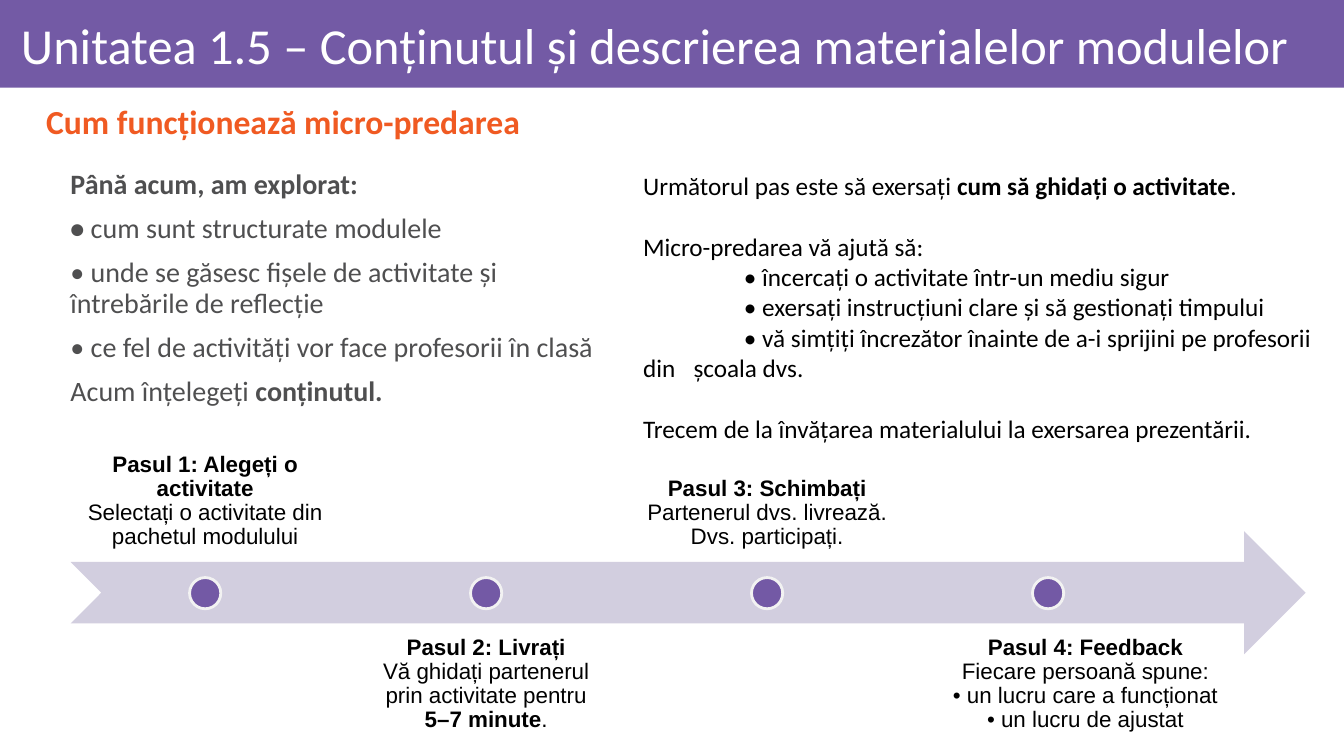
import pptx
import pptx.util
import pptx.dml.color
import pptx.enum.shapes
import pptx.enum.text

Inches = pptx.util.Inches
Pt = pptx.util.Pt
SHAPE = pptx.enum.shapes.MSO_SHAPE
ANCHOR = pptx.enum.text.MSO_ANCHOR
ALIGN = pptx.enum.text.PP_ALIGN

COLORS = {
    "banner": "735AA5", "dot": "7359A5", "dot_line": "F2F2F2", "arrow": "D2CEDF",
    "heading": "F05A22", "body": "4F4F50", "white": "FFFFFF", "black": "000000",
}


def rgb(name):
    return pptx.dml.color.RGBColor.from_string(COLORS[name])


class SlideBuilder:
    def __init__(self, slide):
        self.slide = slide

    def shape(self, kind, box, fill, line=None):
        shape = self.slide.shapes.add_shape(kind, *map(Inches, box))
        shape.shadow.inherit = False
        shape.fill.solid()
        shape.fill.fore_color.rgb = rgb(fill)
        if line:
            shape.line.color.rgb = rgb(line)
            shape.line.width = Pt(2)
        else:
            shape.line.fill.background()

    def text(self, box, lines, size, color, font="Calibri", anchor=ANCHOR.TOP,
             align=ALIGN.LEFT, margins=(0.1, 0.05, 0.1, 0.05), spacing=0.9, before=0, indent=0):
        """Add a text box; asterisks enclose the bold parts of a line."""
        frame = self.slide.shapes.add_textbox(*map(Inches, box)).text_frame
        frame.word_wrap = True
        frame.vertical_anchor = anchor
        (frame.margin_left, frame.margin_top,
         frame.margin_right, frame.margin_bottom) = map(Inches, margins)
        for number, line in enumerate(lines):
            paragraph = frame.add_paragraph() if number else frame.paragraphs[0]
            paragraph.alignment = align
            paragraph.line_spacing = spacing
            paragraph.space_before = Pt(before)
            if indent:
                properties = paragraph._p.get_or_add_pPr()
                properties.set("marL", str(Inches(indent)))
                properties.set("indent", "0")
            for part, words in enumerate(line.split("*")):
                if words:
                    run = paragraph.add_run()
                    run.text = words
                    run.font.name = font
                    run.font.size = Pt(size)
                    run.font.bold = part % 2 == 1
                    run.font.color.rgb = rgb(color)
        return frame


def main():
    presentation = pptx.Presentation()
    presentation.slide_width = Inches(13.33)
    presentation.slide_height = Inches(7.5)
    builder = SlideBuilder(presentation.slides.add_slide(presentation.slide_layouts[6]))

    # Title banner and heading
    builder.shape(SHAPE.RECTANGLE, (0, 0, 13.33, 0.87), "banner")
    builder.text((0.11, 0.09, 13.06, 0.78),
                 ["Unitatea 1.5 – Conținutul și descrierea materialelor modulelor"],
                 36, "white", anchor=ANCHOR.MIDDLE, margins=(0.1, 0.06, 0.06, 0.06))
    builder.text((0.11, 0.93, 13.06, 0.6), ["*Cum funcționează micro-predarea*"],
                 24, "heading", anchor=ANCHOR.MIDDLE, indent=0.25)

    # Left column: what has been explored
    builder.text((0.31, 1.64, 5.79, 2.52), [
        "*Până acum, am explorat:*",
        "*• *cum sunt structurate modulele",
        "• unde se găsesc fișele de activitate și întrebările de reflecție",
        "• ce fel de activități vor face profesorii în clasă",
        "Acum înțelegeți *conținutul.*",
    ], 20, "body", before=10, indent=0.29)

    # Right column: the next step
    next_step = builder.text((5.99, 1.64, 7.34, 2.83), [
        "Următorul pas este să exersați *cum să ghidați o activitate*.",
        "Micro-predarea vă ajută să:",
        "• încercați o activitate într-un mediu sigur",
        "• exersați instrucțiuni clare și să gestionați timpului",
        "• vă simțiți încrezător înainte de a-i sprijini pe profesorii din \tșcoala dvs.",
        "Trecem de la învățarea materialului la exersarea prezentării.",
    ], 18, "black", spacing=1.0, indent=0.29)
    for paragraph in next_step.paragraphs:
        if paragraph.text.startswith("•"):
            paragraph._p.get_or_add_pPr().set("indent", str(Inches(1)))
    for number in (1, 5):
        next_step.paragraphs[number].space_before = Pt(22)

    # Timeline arrow with four steps, alternately above and below
    builder.shape(SHAPE.NOTCHED_RIGHT_ARROW, (0.7, 5.27, 12.25, 1.22), "arrow")
    steps = [
        (2.65, ["*Pasul 1: Alegeți o activitate*",
                "Selectați o activitate din pachetul modulului"]),
        (2.65, ["*Pasul 2: Livrați*", "Vă ghidați partenerul prin activitate pentru",
                "*5–7 minute*."]),
        (2.65, ["*Pasul 3: Schimbați*", "Partenerul dvs. livrează. Dvs. participați."]),
        (3.39, ["*Pasul 4: Feedback*", "Fiecare persoană spune:",
                "• un lucru care a funcționat", "• un lucru de ajustat"]),
    ]
    first_left, last_left = 0.71, 9.07
    pitch = (last_left - first_left) / (len(steps) - 1)
    for number, (width, lines) in enumerate(steps):
        left = first_left + number * pitch
        above = number % 2 == 0
        builder.text((left, 4.35 if above else 6.19, width, 1.22), lines, 16, "black",
                     font="Arial", anchor=ANCHOR.BOTTOM if above else ANCHOR.TOP,
                     align=ALIGN.CENTER, margins=(0.12,) * 4)
        builder.shape(SHAPE.OVAL, (left + 1.17, 5.73, 0.31, 0.31), "dot", "dot_line")

    presentation.save("out.pptx")


if __name__ == "__main__":
    main()
